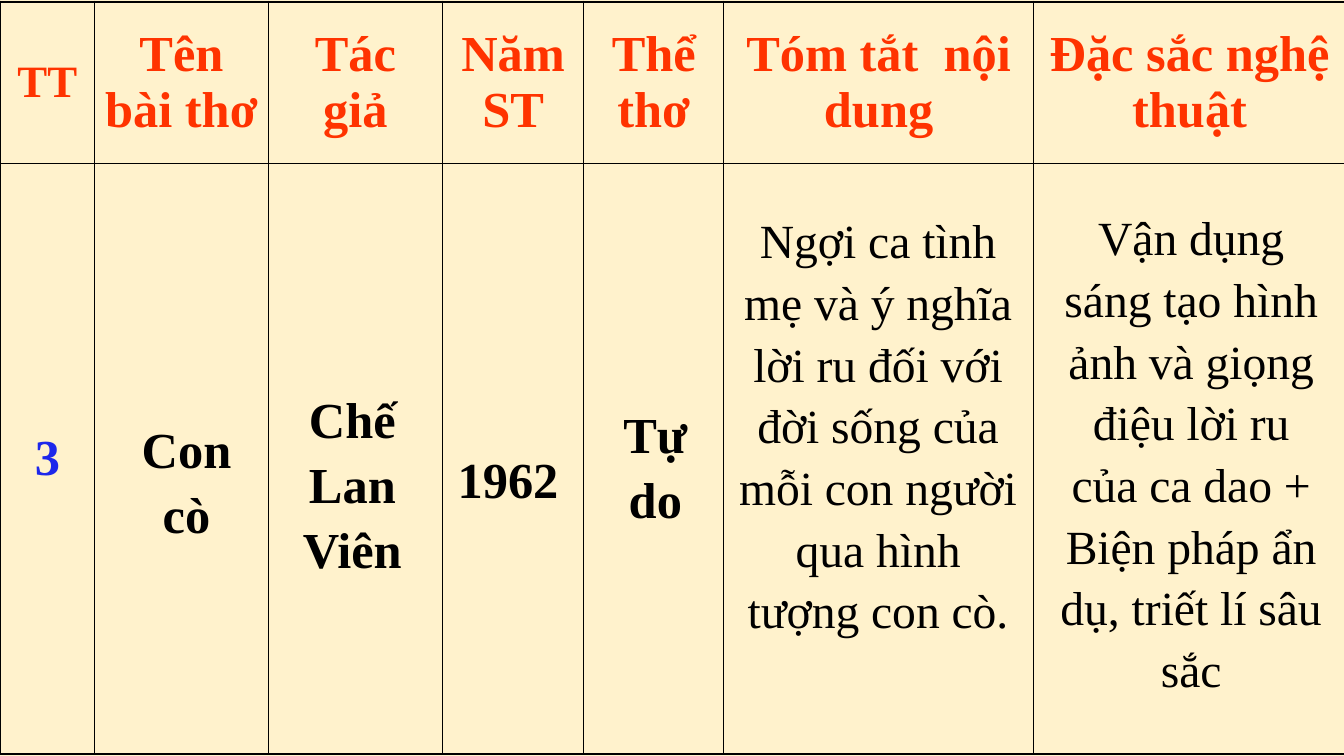
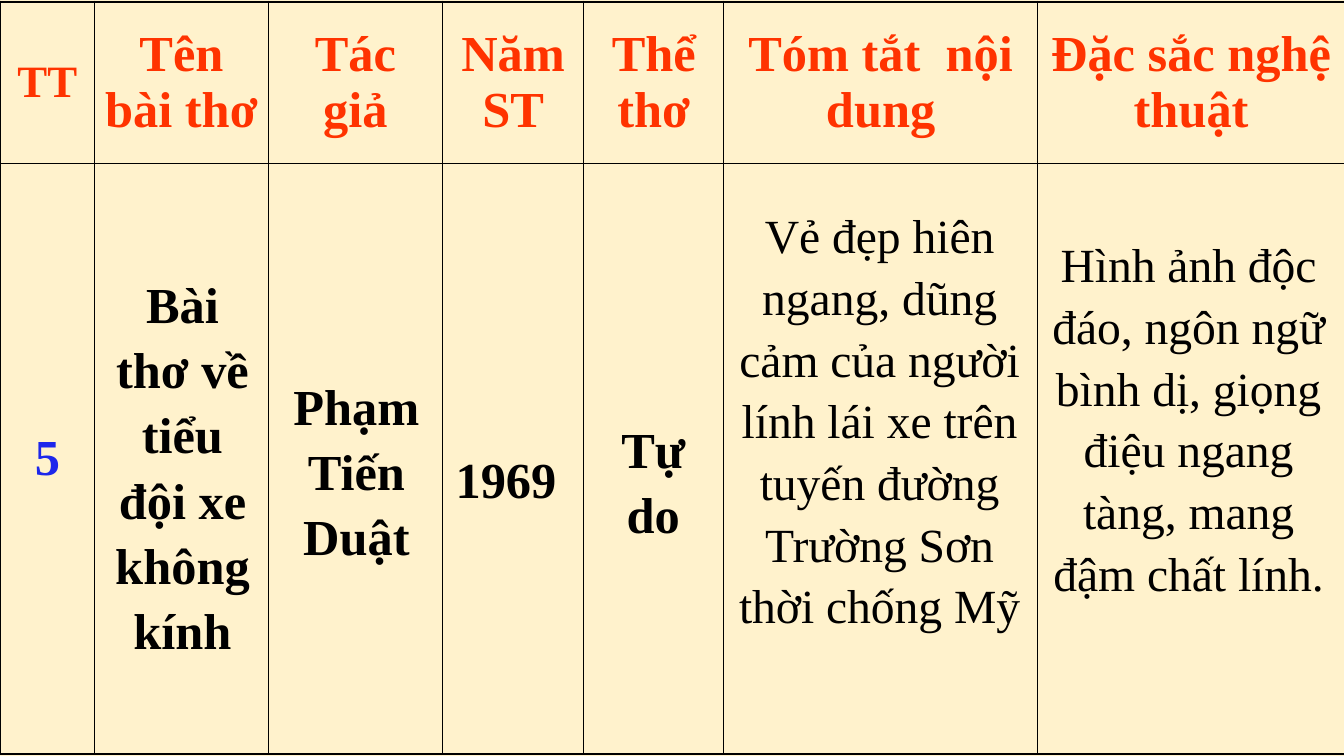
import pptx
import pptx.util
import pptx.dml.color
import pptx.enum.text
import pptx.oxml.ns
import lxml.etree

COLORS = {"page": "FFF2CC", "heading": "FF3300", "number": "1D27EB", "text": "000000"}
FONT = "Times New Roman"
THICK, THIN = 2.25, 1
TABLE_TOP = 0.02
ROW_HEIGHTS = [1.6, 5.86]
FIXED_WIDTHS = [0.94, 1.72, 1.73, 1.4, 1.39]
HEADINGS = ["TT", "Tên bài thơ", "Tác giả", "Năm ST", "Thể thơ",
            "Tóm tắt  nội dung", "Đặc sắc nghệ thuật"]

FACT = {"size": 36, "bold": True, "before": 6, "spacing": 1.08}
YEAR = {**FACT, "align": "LEFT"}
SUMMARY = {"size": 34, "spacing": 1.08}

POEMS = [
    {"number": "3", "widths": [3.07, 3.1], "boxes": [
        ("Con cò", (1.03, 4.05, 1.64, 1.31), FACT),
        ("Chế Lan Viên", (2.72, 3.75, 1.55, 1.92), FACT),
        ("1962", (4.44, 4.35, 1.21, 0.71), YEAR),
        ("Tự do", (5.98, 3.9, 1.04, 1.31), FACT),
        ("Ngợi ca tình mẹ và ý nghĩa lời ru đối với đời sống của mỗi con người "
         "qua hình tượng con cò.", (7.21, 2, 3, 4.11), SUMMARY),
        ("Vận dụng sáng tạo hình ảnh và giọng điệu lời ru của ca dao + Biện pháp "
         "ẩn dụ, triết lí sâu sắc", (10.41, 1.97, 2.81, 4.68), SUMMARY)]},
    {"number": "5", "widths": [3.11, 3.05], "boxes": [
        ("Bài thơ về tiểu đội xe không kính", (0.99, 2.61, 1.64, 3.74), FACT),
        ("Phạm Tiến Duật", (2.76, 3.62, 1.55, 1.92), FACT),
        ("1969", (4.42, 4.35, 1.21, 0.71), YEAR),
        ("Tự do", (5.88, 4.05, 1.2, 1.31), FACT),
        ("Vẻ đẹp hiên ngang, dũng cảm của người lính lái xe trên tuyến đường "
         "Trường Sơn thời chống Mỹ", (7.22, 1.95, 3.01, 4.11), SUMMARY),
        ("Hình ảnh độc đáo, ngôn ngữ bình dị, giọng điệu ngang tàng, mang đậm "
         "chất lính.", (10.31, 2.24, 2.96, 3.53), SUMMARY)]},
]


def write_text(frame, text, size=36, bold=False, color="text", align="CENTER",
               before=0, spacing=None):
    para = frame.paragraphs[0]
    para.alignment = pptx.enum.text.PP_ALIGN[align]
    para.space_before = pptx.util.Pt(before)
    if spacing:
        para.line_spacing = spacing
    span = para.add_run()
    span.text = text
    span.font.name = FONT
    span.font.size = pptx.util.Pt(size)
    span.font.bold = bold
    span.font.color.rgb = pptx.dml.color.RGBColor.from_string(COLORS[color])


def draw_borders(cell, widths):
    properties = cell._tc.get_or_add_tcPr()
    for position, (side, width) in enumerate(widths.items()):
        line = lxml.etree.Element(pptx.oxml.ns.qn("a:ln" + side), w=str(pptx.util.Pt(width)))
        fill = lxml.etree.SubElement(line, pptx.oxml.ns.qn("a:solidFill"))
        lxml.etree.SubElement(fill, pptx.oxml.ns.qn("a:srgbClr"), val=COLORS["text"])
        properties.insert(position, line)


def add_poem_table(page, number, widths):
    rows, columns = len(ROW_HEIGHTS), len(widths)
    table = page.shapes.add_table(
        rows, columns, 0, pptx.util.Inches(TABLE_TOP),
        pptx.util.Inches(sum(widths)), pptx.util.Inches(sum(ROW_HEIGHTS))).table
    table.first_row = table.horz_banding = False
    for column, width in zip(table.columns, widths):
        column.width = pptx.util.Inches(width)
    for row, height in zip(table.rows, ROW_HEIGHTS):
        row.height = pptx.util.Inches(height)
    for r in range(rows):
        for c in range(columns):
            cell = table.cell(r, c)
            cell.fill.background()
            cell.vertical_anchor = pptx.enum.text.MSO_ANCHOR.MIDDLE
            draw_borders(cell, {"L": THICK if c == 0 else THIN,
                                "R": THICK if c == columns - 1 else THIN,
                                "T": THICK if r == 0 else THIN,
                                "B": THICK if r == rows - 1 else THIN})
    for c, heading in enumerate(HEADINGS):
        write_text(table.cell(0, c).text_frame, heading, size=32 if c == 0 else 36,
                   bold=True, color="heading", before=6)
    write_text(table.cell(1, 0).text_frame, number, bold=True, color="number", before=6)


def add_text_box(page, text, place, style):
    frame = page.shapes.add_textbox(*map(pptx.util.Inches, place)).text_frame
    frame.word_wrap = style is not YEAR
    frame.auto_size = pptx.enum.text.MSO_AUTO_SIZE.SHAPE_TO_FIT_TEXT
    write_text(frame, text, **style)


def main():
    deck = pptx.Presentation()
    deck.slide_width = pptx.util.Inches(13.33)
    deck.slide_height = pptx.util.Inches(7.5)
    backdrop = deck.slide_master.background.fill
    backdrop.solid()
    backdrop.fore_color.rgb = pptx.dml.color.RGBColor.from_string(COLORS["page"])
    for poem in POEMS:
        page = deck.slides.add_slide(deck.slide_layouts[6])
        add_poem_table(page, poem["number"], FIXED_WIDTHS + poem["widths"])
        for text, place, style in poem["boxes"]:
            add_text_box(page, text, place, style)
    deck.save("out.pptx")


if __name__ == "__main__":
    main()
